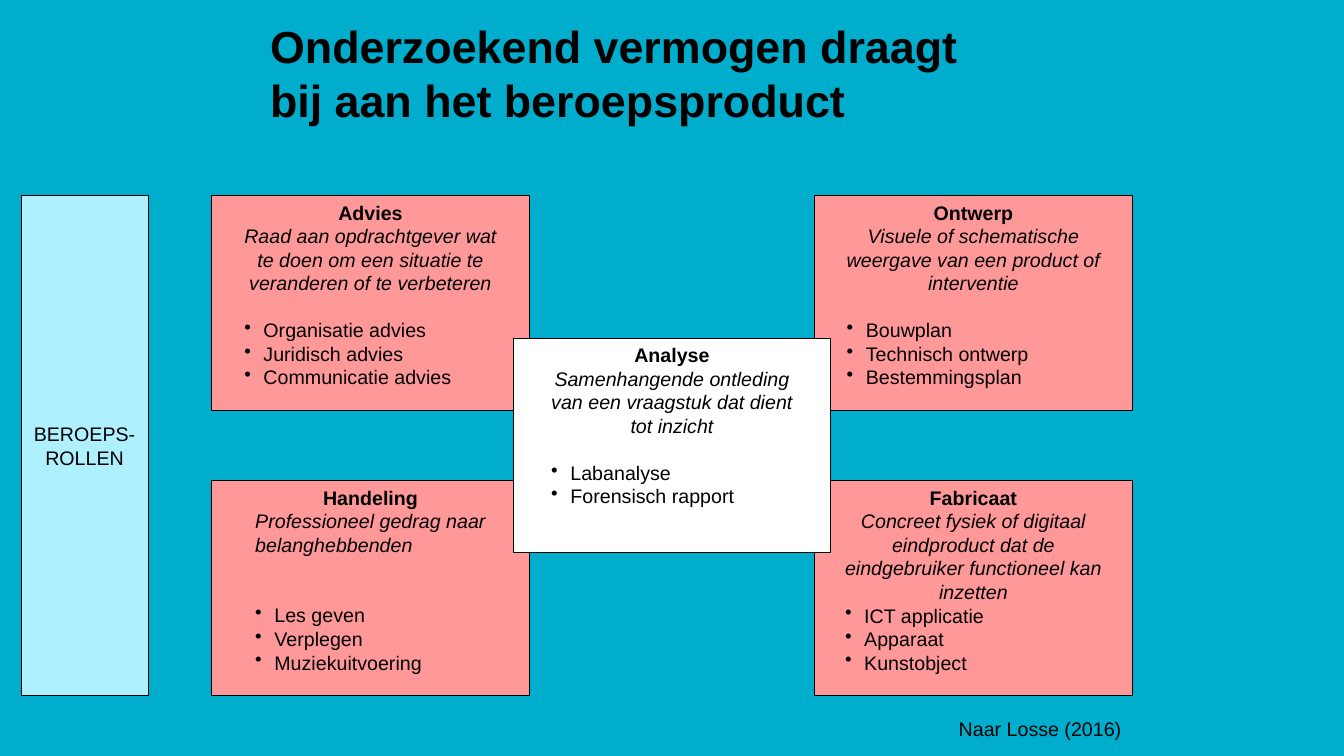
"""Slide with five professional products around the theme of research ability."""
from pptx import Presentation
from pptx.dml.color import RGBColor as RGB
from pptx.enum.shapes import MSO_SHAPE as SHAPE
from pptx.enum.text import MSO_ANCHOR as ANCHOR, PP_ALIGN as ALIGN
from pptx.oxml.ns import qn
from pptx.util import Inches, Pt
from lxml.etree import SubElement

THEME = dict(font="Arial", title=32, body=14, back="00ADCD", ink="000000",
             role="FF9999", core="FFFFFF", side="AFF0FF")
LEFT, TOP, COL, ROW = 2.1, 1.94, 2.99, 1.415
BOX_W, BOX_H = 3.15, 2.13
INDENT, LINE = 0.19, 16.8

ROLES = [
    (0, 0, "role", "Advies",
     "Raad aan opdrachtgever wat te doen om een situatie te veranderen of te verbeteren",
     ALIGN.CENTER, 1, ["Organisatie advies", "Juridisch advies", "Communicatie advies"]),
    (2, 0, "role", "Ontwerp",
     "Visuele of schematische weergave van een product of interventie",
     ALIGN.CENTER, 1, ["Bouwplan", "Technisch ontwerp", "Bestemmingsplan"]),
    (0, 2, "role", "Handeling", "Professioneel gedrag naar belanghebbenden",
     ALIGN.LEFT, 2, ["Les geven", "Verplegen", "Muziekuitvoering"]),
    (2, 2, "role", "Fabricaat",
     "Concreet fysiek of digitaal eindproduct dat de eindgebruiker functioneel kan inzetten",
     ALIGN.CENTER, 0, ["ICT applicatie", "Apparaat", "Kunstobject"]),
    (1, 1, "core", "Analyse",
     "Samenhangende ontleding van een vraagstuk dat dient tot inzicht",
     ALIGN.CENTER, 1, ["Labanalyse", "Forensisch rapport"]),
]


def add_box(at, fill=None, **frame):
    """Add a filled rectangle, or a plain text box when there is no fill."""
    at = [Inches(v) for v in at]
    if fill:
        sp = s.shapes.add_shape(SHAPE.RECTANGLE, *at)
        sp.shadow.inherit = False
        sp.fill.solid()
        sp.fill.fore_color.rgb = RGB.from_string(THEME[fill])
        sp.line.color.rgb = RGB.from_string(THEME["ink"])
        sp.line.width = Pt(0.75)
    else:
        sp = s.shapes.add_textbox(*at)
    for name, value in frame.items():
        setattr(sp.text_frame, name, value)
    return sp.text_frame


def write(p, text, align=ALIGN.LEFT, size="body", **style):
    """Fill a paragraph with text in the theme font."""
    p.text = text
    p.alignment = align
    style = dict(name=THEME["font"], size=Pt(THEME[size]), **style)
    for r in p.runs:
        r.font.color.rgb = RGB.from_string(THEME["ink"])
        for name, value in style.items():
            setattr(r.font, name, value)


prs = Presentation()
prs.slide_width, prs.slide_height = Inches(13.33), Inches(7.5)
s = prs.slides.add_slide(prs.slide_layouts[6])
s.background.fill.solid()
s.background.fill.fore_color.rgb = RGB.from_string(THEME["back"])

tf = add_box((2.58, 0.12, 7.55, 1.18), word_wrap=True, vertical_anchor=ANCHOR.BOTTOM)
write(tf.paragraphs[0], "Onderzoekend vermogen draagt bij aan het beroepsproduct",
      size="title", bold=True)

for col, row, fill, name, meaning, align, gap, products in ROLES:
    tf = add_box((LEFT + col * COL, TOP + row * ROW, BOX_W, BOX_H), fill,
                 word_wrap=True, vertical_anchor=ANCHOR.TOP,
                 margin_left=Inches(0.28), margin_right=Inches(0.28))
    tf._txBody.bodyPr.set("anchorCtr", "1")
    write(tf.paragraphs[0], name, ALIGN.CENTER, bold=True)
    write(tf.add_paragraph(), meaning, align, italic=True)
    for i, product in enumerate(products):
        p = tf.add_paragraph()
        pPr = p._p.get_or_add_pPr()
        pPr.set("marL", str(Inches(INDENT)))
        pPr.set("indent", str(-Inches(INDENT)))
        SubElement(pPr, qn("a:buChar"), char="•")
        write(p, product)
        if i == 0 and gap:
            p.space_before = Pt(gap * LINE)

tf = add_box((9.41, 7.06, 1.82, 0.34), word_wrap=False)
write(tf.paragraphs[0], "Naar Losse (2016)")

tf = add_box((0.21, TOP, 1.26, 2 * ROW + BOX_H), "side",
             word_wrap=False, vertical_anchor=ANCHOR.MIDDLE)
write(tf.paragraphs[0], "BEROEPS-\vROLLEN", ALIGN.CENTER)

prs.save("out.pptx")
